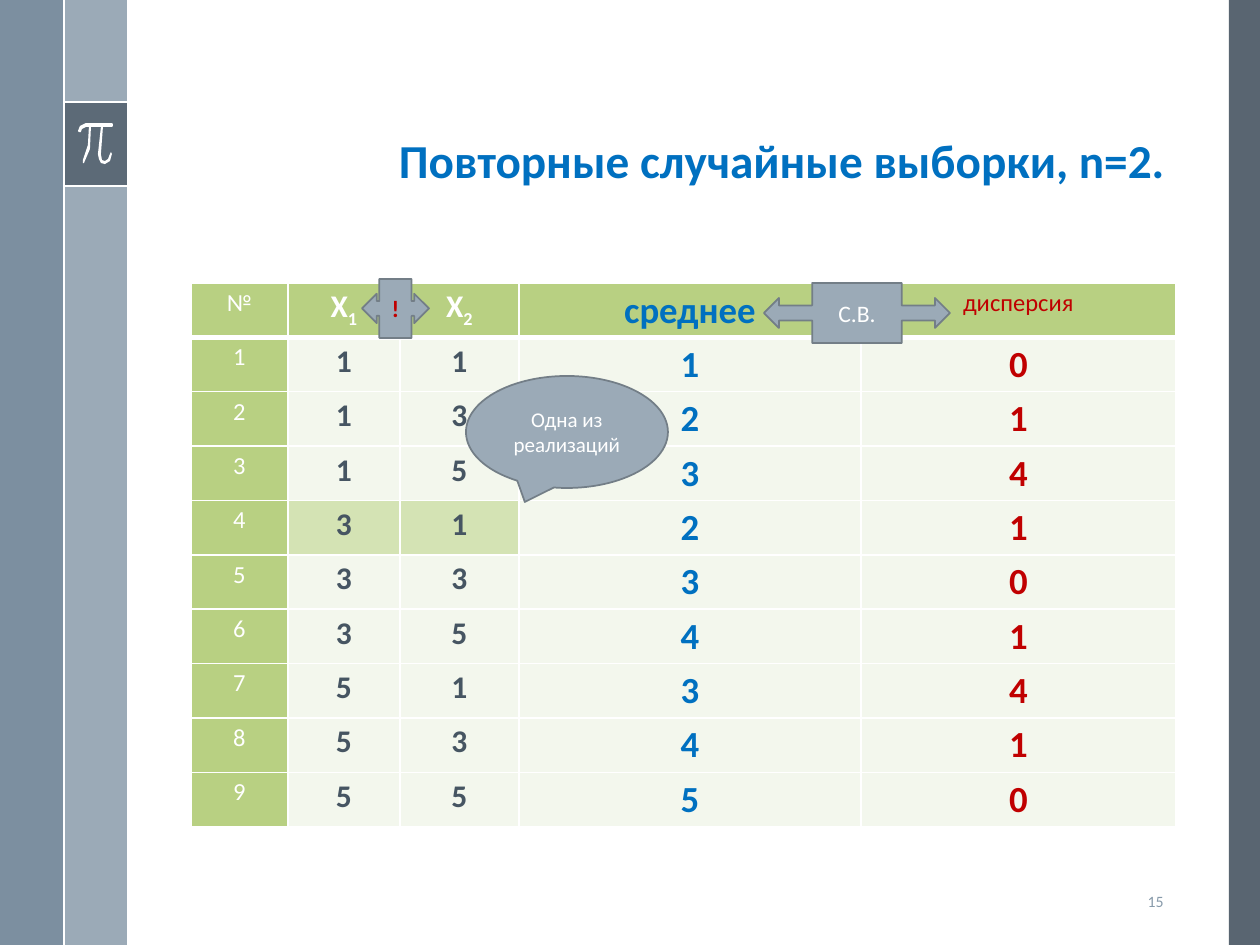
from itertools import product

from lxml import etree
from pptx import Presentation
from pptx.dml.color import RGBColor
from pptx.enum.shapes import MSO_CONNECTOR, MSO_SHAPE
from pptx.enum.text import MSO_ANCHOR, PP_ALIGN
from pptx.oxml.ns import qn
from pptx.util import Emu, Pt

RECT, CALLOUT, ARROWS = (MSO_SHAPE.RECTANGLE, MSO_SHAPE.OVAL_CALLOUT,
                         MSO_SHAPE.LEFT_RIGHT_ARROW_CALLOUT)
STRAIGHT = MSO_CONNECTOR.STRAIGHT
CENTER, RIGHT = PP_ALIGN.CENTER, PP_ALIGN.RIGHT
MIDDLE, BOTTOM = MSO_ANCHOR.MIDDLE, MSO_ANCHOR.BOTTOM

SCALE = 914400 / 126  # EMU per px
FONT = "Calibri"
WHITE, BLUE, RED, SLATE = "FFFFFF", "0070C0", "C00000", "465562"
DARK, STEEL, EDGE = "475562", "9BAAB7", "737E87"
GREEN, LIGHT_GREEN, PALE_GREEN = "B8D082", "D4E3B4", "F3F7ED"

# Content
TITLE = "Повторные случайные выборки, n=2."
PAGE_NUMBER = "15"
POPULATION = (1, 3, 5)
MARKED_SAMPLE = 4
# heading, subscript, size, colour, bold
HEADINGS = [("№", "", 14, WHITE, False),
            ("Х", "1", 18, WHITE, True),
            ("Х", "2", 18, WHITE, True),
            ("среднее", "", 21, BLUE, True),
            ("дисперсия", "", 14, RED, False)]
# size, colour, bold of the body columns
BODY_STYLES = [(14, WHITE, False), (18, SLATE, True), (18, SLATE, True),
               (21, BLUE, True), (21, RED, True)]
COLUMN_WIDTHS = [97, 112, 119, 342, 315]
TABLE_LEFT, TABLE_TOP, TABLE_HEIGHT = 191, 283, 544

# left, top, width, height, colour, opacity in percent
BANDS = [(1229, 0, 31, 945, DARK, 90),
         (64, 0, 63, 945, STEEL, 100),
         (0, 0, 63, 945, "6A8093", 88),
         (64, 102, 63, 84, DARK, 75)]
RULES = [(64, 102, 127, 102), (64, 186, 127, 186), (64, 0, 64, 945)]
PI_OUTLINE = [
    (112, 123), (86, 123), (80, 126), (78, 131), (79, 132), (81, 132), (82, 129),
    (86, 127), (89, 127), (88, 145), (83, 160), (83, 163), (84, 163), (90, 149),
    (91, 127), (101, 127), (98, 154), (99, 159), (101, 163), (105, 164), (110, 161),
    (112, 154), (111, 152), (110, 154), (108, 159), (105, 161), (102, 160),
    (101, 154), (103, 127), (112, 127), (113, 126), (113, 124)]
# preset, left, top, width, height, text, size, colour, bold
NOTES = [(CALLOUT, 466, 376, 202, 112, "Одна из реализаций", 12, WHITE, False),
         (ARROWS, 764, 283, 186, 60, "С.В.", 13.5, WHITE, False),
         (ARROWS, 362, 279, 67, 59, "!", 13.5, RED, True)]


def px(value):
    return Emu(round(value * SCALE))


def color(code):
    return RGBColor.from_string(code)


def paint(shape, fill, line=None, opacity=100):
    shape.shadow.inherit = False
    shape.fill.solid()
    shape.fill.fore_color.rgb = color(fill)
    if opacity < 100:
        tone = shape.fill._xPr.find(qn("a:solidFill"))[0]
        etree.SubElement(tone, qn("a:alpha")).set("val", str(opacity * 1000))
    if line:
        shape.line.color.rgb = color(line)
        shape.line.width = Pt(1)
    else:
        shape.line.fill.background()


def write(frame, text, size, tone, bold=False, align=CENTER):
    frame.word_wrap = True
    para = frame.paragraphs[0]
    para.alignment = align
    para.font.name, para.font.size, para.font.bold = FONT, Pt(size), bold
    para.font.color.rgb = color(tone)
    para.add_run().text = text
    return para


def add_text(page, place, text, size, tone, bold, anchor):
    box = page.shapes.add_textbox(*map(px, place))
    box.text_frame.vertical_anchor = anchor
    return write(box.text_frame, text, size, tone, bold, RIGHT)


def style_cell(cell, fill, bottom=1):
    cell.margin_left = cell.margin_right = px(10)
    cell.margin_top = cell.margin_bottom = px(5)
    for side, width in zip("LRTB", (1, 1, 1, bottom)):
        line = etree.SubElement(cell._tc.get_or_add_tcPr(), qn(f"a:ln{side}"))
        line.set("w", str(Pt(width)))
        solid = etree.SubElement(line, qn("a:solidFill"))
        etree.SubElement(solid, qn("a:srgbClr")).set("val", WHITE)
    cell.fill.solid()
    cell.fill.fore_color.rgb = color(fill)


def add_samples(page):
    samples = list(product(POPULATION, repeat=2))
    count = len(samples) + 1
    table = page.shapes.add_table(
        count, len(HEADINGS), px(TABLE_LEFT), px(TABLE_TOP),
        px(sum(COLUMN_WIDTHS)), px(TABLE_HEIGHT)).table
    table.first_row = table.horz_banding = False
    for column, width in zip(table.columns, COLUMN_WIDTHS):
        column.width = px(width)
    for row in table.rows:
        row.height = px(TABLE_HEIGHT / count)

    for index, (text, subscript, *style) in enumerate(HEADINGS):
        cell = table.cell(0, index)
        style_cell(cell, GREEN, bottom=3)
        para = write(cell.text_frame, text, *style)
        if subscript:
            span = para.add_run()
            span.text = subscript
            span._r.get_or_add_rPr().set("baseline", "-25000")

    for number, (first, second) in enumerate(samples, 1):
        mean = (first + second) // 2
        variance = (first - second) ** 2 // 4
        values = (number, first, second, mean, variance)
        for index, (value, style) in enumerate(zip(values, BODY_STYLES)):
            marked = number == MARKED_SAMPLE and index in (1, 2)
            fill = GREEN if index == 0 else LIGHT_GREEN if marked else PALE_GREEN
            cell = table.cell(number, index)
            style_cell(cell, fill)
            write(cell.text_frame, str(value), *style)


def main():
    deck = Presentation()
    deck.slide_width, deck.slide_height = px(1260), px(945)
    page = deck.slides.add_slide(deck.slide_layouts[6])

    # Side bands, pi sign and white rules
    for *place, fill, opacity in BANDS:
        paint(page.shapes.add_shape(RECT, *map(px, place)), fill, opacity=opacity)
    builder = page.shapes.build_freeform(*PI_OUTLINE[0], scale=SCALE)
    builder.add_line_segments(PI_OUTLINE[1:], close=True)
    paint(builder.convert_to_shape(), WHITE)
    for ends in RULES:
        rule = page.shapes.add_connector(STRAIGHT, *map(px, ends))
        rule.line.color.rgb = color(WHITE)
        rule.line.width = Pt(1.5)
        etree.SubElement(rule._element.spPr, qn("a:effectLst"))

    # Title, table and page number
    title = add_text(page, (165, 24, 1012, 171), TITLE, 27, BLUE, True, BOTTOM)
    title.line_spacing = 0.9
    add_samples(page)
    add_text(page, (1113, 876, 63, 50), PAGE_NUMBER, 9, "879AAA", False, MIDDLE)

    # Notes over the table
    for preset, left, top, width, height, *label in NOTES:
        note = page.shapes.add_shape(preset, *map(px, (left, top, width, height)))
        paint(note, STEEL, EDGE)
        note.text_frame.vertical_anchor = MIDDLE
        write(note.text_frame, *label)

    deck.save("out.pptx")


if __name__ == "__main__":
    main()
